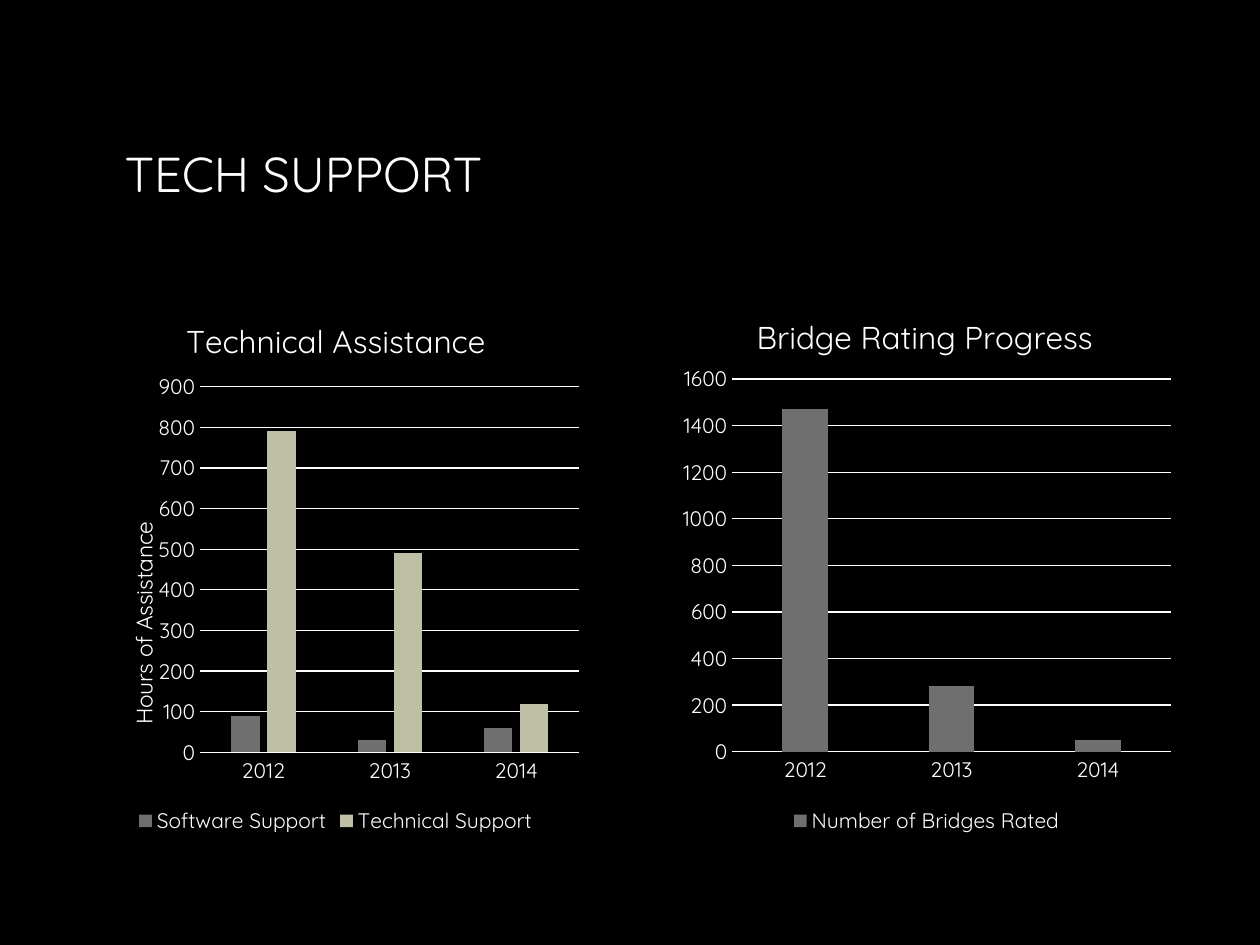
from lxml import etree
from pptx import Presentation
from pptx import util as u
from pptx.chart.data import CategoryChartData
from pptx.dml.color import RGBColor
from pptx.enum import chart as ch, text
from pptx.oxml import ns

PX = 9144
BLACK = RGBColor(0x00, 0x00, 0x00)
WHITE = RGBColor(0xFF, 0xFF, 0xFF)
GREY = RGBColor(0x6F, 0x6F, 0x6F)
SAND = RGBColor(0xBF, 0xBF, 0xA5)
FACE = "Quicksand"
YEARS = ["2012", "2013", "2014"]


def px(n):
    return u.Emu(n * PX)


def style(font, size):
    font.name = FACE
    font.size = u.Pt(size)
    font.bold = False
    font.color.rgb = WHITE


def rule(line):
    line.color.rgb = WHITE
    line.width = u.Pt(0.75)


def place(node, after, box, spot, inner=False):
    for old in node.findall(ns.qn("c:layout")):
        node.remove(old)
    lay = etree.Element(ns.qn("c:layout"))
    man = etree.SubElement(lay, ns.qn("c:manualLayout"))
    pairs = [("layoutTarget", "inner")] if inner else []
    pairs += [("xMode", "edge"), ("yMode", "edge")]
    sizes = (box[2], box[3]) * 2
    pairs += [(key, str(round(n / size, 3)))
              for key, n, size in zip("xywh", spot, sizes)]
    for key, val in pairs:
        etree.SubElement(man, ns.qn("c:" + key)).set("val", val)
    if after is None:
        node.insert(0, lay)
    else:
        node.find(ns.qn(after)).addnext(lay)


def label(title, words, size, box, spot):
    title.text_frame.text = words
    style(title.text_frame.paragraphs[0].runs[0].font, size)
    place(title._element, "c:tx", box, spot)


def heading(slide, box, words):
    frame = slide.shapes.add_textbox(*map(px, box)).text_frame
    frame.word_wrap = True
    frame.vertical_anchor = text.MSO_ANCHOR.MIDDLE
    frame.text = words
    style(frame.paragraphs[0].runs[0].font, 28)


def columns(slide, box, name, spot, plot, step, rows, side=None):
    data = CategoryChartData()
    data.categories = YEARS
    for key, vals, color in rows:
        data.add_series(key, vals)
    chart = slide.shapes.add_chart(
        ch.XL_CHART_TYPE.COLUMN_CLUSTERED, *map(px, box), data).chart
    style(chart.font, 10)
    chart.has_title = True
    label(chart.chart_title, name, 18, box, spot)
    chart.has_legend = True
    chart.legend.position = ch.XL_LEGEND_POSITION.BOTTOM
    chart.legend.include_in_layout = False
    style(chart.legend.font, 12)

    cats, vals = chart.category_axis, chart.value_axis
    for axis in (cats, vals):
        axis.major_tick_mark = ch.XL_TICK_MARK.NONE
        axis.minor_tick_mark = ch.XL_TICK_MARK.NONE
        style(axis.tick_labels.font, 12)
    rule(cats.format.line)
    vals.format.line.fill.background()
    rule(vals.major_gridlines.format.line)
    vals.minimum_scale = 0
    vals.maximum_scale, vals.major_unit = step
    if side:
        label(vals.axis_title, side, 13, box, (33, 186))

    bars = chart.plots[0]
    bars.gap_width = 219
    bars.overlap = -27
    bars.vary_by_categories = False
    for row, (key, nums, color) in zip(bars.series, rows):
        row.format.fill.solid()
        row.format.fill.fore_color.rgb = color
    area = chart._chartSpace.find(".//" + ns.qn("c:plotArea"))
    place(area, None, box, plot, True)


def main():
    deck = Presentation()
    deck.slide_width, deck.slide_height = px(1000), px(750)
    slide = deck.slides.add_slide(deck.slide_layouts[6])
    slide.background.fill.solid()
    slide.background.fill.fore_color.rgb = BLACK
    heading(slide, (89, 65, 821, 144), "TECH SUPPORT")
    columns(slide, (65, 225, 403, 441), "Technical Assistance",
            (78, 23), (94, 82, 301, 290), (900, 100),
            [("Software Support", (90, 30, 60), GREY),
             ("Technical Support", (790, 490, 120), SAND)],
            "Hours of Assistance")
    columns(slide, (534, 225, 403, 441), "Bridge Rating Progress",
            (62, 20), (47, 76, 348, 296), (1600, 200),
            [("Number of Bridges Rated", (1470, 280, 50), GREY)])
    deck.save("out.pptx")


if __name__ == "__main__":
    main()
